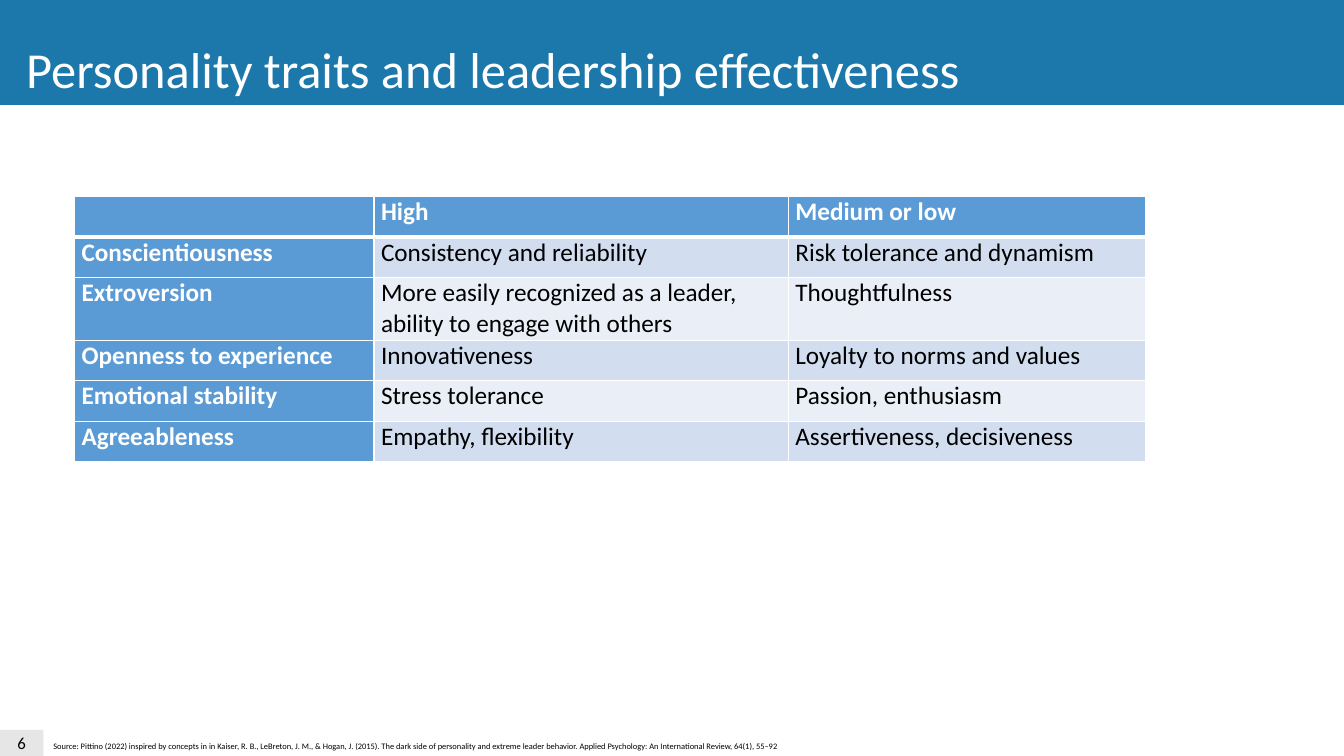
import lxml.etree
import pptx
import pptx.dml.color
import pptx.enum.shapes
import pptx.enum.text
import pptx.oxml.ns
import pptx.util

RGBColor = pptx.dml.color.RGBColor
WHITE = RGBColor(0xFF, 0xFF, 0xFF)
BLACK = RGBColor(0x00, 0x00, 0x00)
BAND_BLUE = RGBColor(0x1C, 0x78, 0xAB)
HEADER_BLUE = RGBColor(0x5B, 0x9B, 0xD5)
STRIPES = (RGBColor(0xEA, 0xEF, 0xF7), RGBColor(0xD2, 0xDE, 0xEF))
NUMBER_GREY = RGBColor(0xE7, 0xE6, 0xE6)

SOURCE = (
    "Source: Pittino (2022) inspired by concepts in in Kaiser, R. B., LeBreton, J. M., "
    "& Hogan, J. (2015). The dark side of personality and extreme leader behavior. "
    "Applied Psychology: An International Review, 64(1), 55–92"
)
TRAITS = (
    ("", "High", "Medium or low"),
    ("Conscientiousness", "Consistency and reliability", "Risk tolerance and dynamism"),
    ("Extroversion", "More easily recognized as a leader,\vability to engage with others", "Thoughtfulness"),
    ("Openness to experience", "Innovativeness", "Loyalty to norms and values"),
    ("Emotional stability", "Stress tolerance", "Passion, enthusiasm"),
    ("Agreeableness", "Empathy, flexibility", "Assertiveness, decisiveness"),
)


def write_text(frame, text, size, color=BLACK, bold=False, font="Calibri",
               align=pptx.enum.text.PP_ALIGN.LEFT, space_after=0):
    """Put one formatted paragraph into a text frame."""
    paragraph = frame.paragraphs[0]
    paragraph.text = text
    paragraph.alignment = align
    paragraph.space_after = pptx.util.Pt(space_after)
    for run in paragraph.runs:
        run.font.name = font
        run.font.size = pptx.util.Pt(size)
        run.font.bold = bold
        run.font.color.rgb = color


def add_border(properties, position, side, points):
    """Give one side of a table cell a white line."""
    qn = pptx.oxml.ns.qn
    line = lxml.etree.Element(qn(f"a:{side}"), w=str(pptx.util.Pt(points)))
    fill = lxml.etree.SubElement(line, qn("a:solidFill"))
    lxml.etree.SubElement(fill, qn("a:srgbClr"), val=str(WHITE))
    properties.insert(position, line)


class SlideBuilder:
    """Builds one slide on a grid of 100 columns and 100 rows."""

    def __init__(self, presentation):
        """Add a title-only slide."""
        self.column = presentation.slide_width / 100
        self.row = presentation.slide_height / 100
        self.slide = presentation.slides.add_slide(presentation.slide_layouts[5])

    def place(self, left, top, width, height):
        """Turn grid units into lengths."""
        return (round(left * self.column), round(top * self.row),
                round(width * self.column), round(height * self.row))

    def fit(self, frame):
        """Keep text on one line in a box that fits it."""
        frame.word_wrap = False
        frame.auto_size = pptx.enum.text.MSO_AUTO_SIZE.SHAPE_TO_FIT_TEXT
        frame.vertical_anchor = pptx.enum.text.MSO_ANCHOR.TOP

    def title(self, text, box):
        """Place and format the title placeholder."""
        shape = self.slide.shapes.title
        shape.left, shape.top, shape.width, shape.height = self.place(*box)
        self.fit(shape.text_frame)
        write_text(shape.text_frame, text, size=36, color=WHITE)

    def rectangle(self, box, color):
        """Add a plain filled rectangle."""
        shape = self.slide.shapes.add_shape(
            pptx.enum.shapes.MSO_SHAPE.RECTANGLE, *self.place(*box))
        shape.shadow.inherit = False
        shape.fill.solid()
        shape.fill.fore_color.rgb = color
        shape.line.fill.background()
        return shape

    def title_band(self, box):
        """Add the colour band behind the title."""
        band = self.rectangle(box, BAND_BLUE)
        self.slide.shapes.title.element.addprevious(band.element)

    def page_number(self, text, box):
        """Add the page number on its grey block."""
        frame = self.rectangle(box, NUMBER_GREY).text_frame
        frame.vertical_anchor = pptx.enum.text.MSO_ANCHOR.MIDDLE
        write_text(frame, text, size=12, align=pptx.enum.text.PP_ALIGN.CENTER)

    def source_note(self, text, box):
        """Add the small source line."""
        frame = self.slide.shapes.add_textbox(*self.place(*box)).text_frame
        self.fit(frame)
        write_text(frame, text, size=6)

    def table(self, rows, left, top, widths, heights):
        """Add a striped table with a header row and a header column."""
        box = self.place(left, top, sum(widths), sum(heights))
        shape = self.slide.shapes.add_table(len(rows), len(widths), *box)
        table = shape.table
        for column, width in zip(table.columns, widths):
            column.width = round(width * self.column)
        for row_index, texts in enumerate(rows):
            table.rows[row_index].height = round(heights[row_index] * self.row)
            for column_index, text in enumerate(texts):
                heading = row_index == 0 or column_index == 0
                cell = table.cell(row_index, column_index)
                cell.margin_left = cell.margin_right = pptx.util.Inches(0.07)
                cell.margin_top = cell.margin_bottom = 0
                cell.fill.solid()
                cell.fill.fore_color.rgb = HEADER_BLUE if heading else STRIPES[row_index % 2]
                write_text(cell.text_frame, text, size=18, bold=heading,
                           color=WHITE if heading else BLACK, space_after=10)
        for index, properties in enumerate(shape.element.iter(pptx.oxml.ns.qn("a:tcPr"))):
            row_index = index // len(widths)
            points = {"lnL": 1, "lnR": 1, "lnT": 3 if row_index == 1 else 1,
                      "lnB": 3 if row_index == 0 else 1}
            for position, (side, width) in enumerate(points.items()):
                add_border(properties, position, side, width)


def main():
    """Build and save the slide."""
    presentation = pptx.Presentation()
    presentation.slide_width = pptx.util.Inches(13.33)
    presentation.slide_height = pptx.util.Inches(7.5)
    builder = SlideBuilder(presentation)
    builder.title_band((0, -0.13, 100.08, 14))
    builder.title("Personality traits and leadership effectiveness", (1.2, 4.4, 71.72, 9.47))
    builder.page_number("6", (0, 96.53, 3.23, 3.47))
    builder.source_note(SOURCE, (3.23, 97.33, 56.26, 2.67))
    heights = [8.27 if "\v" in "".join(texts) else 5.36 for texts in TRAITS]
    builder.table(TRAITS, left=5.55, top=26, widths=(22.28, 30.83, 26.56), heights=heights)
    presentation.save("out.pptx")


if __name__ == "__main__":
    main()
